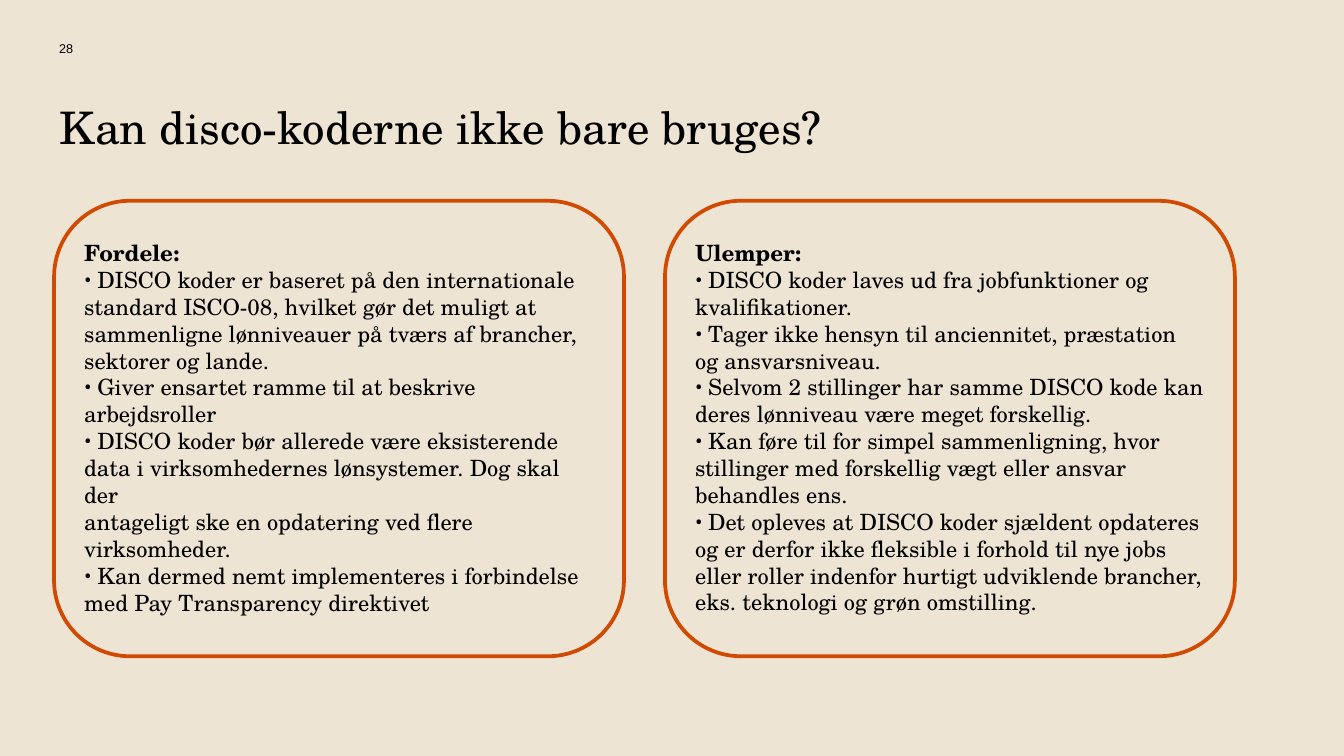
import pptx
import pptx.dml.color
import pptx.enum.shapes
import pptx.util

Pt = pptx.util.Pt
COLORS = {"back": "EEE4D4", "edge": "D04A02", "ink": "000000"}
SERIF = "TeX Gyre Schola"
MARK = "• "

PROS = [
    "• DISCO koder er baseret på den internationale",
    "standard ISCO-08, hvilket gør det muligt at",
    "sammenligne lønniveauer på tværs af brancher,",
    "sektorer og lande.",
    "• Giver ensartet ramme til at beskrive arbejdsroller",
    "• DISCO koder bør allerede være eksisterende data i "
    "virksomhedernes lønsystemer. Dog skal der",
    "antageligt ske en opdatering ved flere virksomheder.",
    "• Kan dermed nemt implementeres i forbindelse",
    "med Pay Transparency direktivet",
]
CONS = [
    "• DISCO koder laves ud fra jobfunktioner og",
    "kvalifikationer.",
    "• Tager ikke hensyn til anciennitet, præstation",
    "og ansvarsniveau.",
    "• Selvom 2 stillinger har samme DISCO kode kan",
    "deres lønniveau være meget forskellig.",
    "• Kan føre til for simpel sammenligning, hvor stillinger med "
    "forskellig vægt eller ansvar behandles ens.",
    "• Det opleves at DISCO koder sjældent opdateres og er derfor ikke "
    "fleksible i forhold til nye jobs eller roller indenfor hurtigt "
    "udviklende brancher, eks. teknologi og grøn omstilling.",
]


def color(name):
    return pptx.dml.color.RGBColor.from_string(COLORS[name])


def add_run(para, text, size, font=SERIF, bold=False):
    run = para.add_run()
    run.text = text
    run.font.size = Pt(size)
    run.font.name = font
    run.font.bold = bold
    run.font.color.rgb = color("ink")


def add_text(slide, lines, left, top, width, height, size=12, font=SERIF,
             inset=(7.2, 3.6), head=False):
    """Add one paragraph per line; with head, the first one is bold."""
    box = slide.shapes.add_textbox(Pt(left), Pt(top), Pt(width), Pt(height))
    frame = box.text_frame
    frame.word_wrap = True
    frame.margin_left = frame.margin_right = Pt(inset[0])
    frame.margin_top = frame.margin_bottom = Pt(inset[1])
    for i, line in enumerate(lines):
        para = frame.add_paragraph() if i else frame.paragraphs[0]
        if line.startswith(MARK):
            add_run(para, MARK, size, "Roboto")
            line = line.removeprefix(MARK)
        add_run(para, line, size, font, head and i == 0)


def add_panel(slide, title, lines, left, height):
    frame = slide.shapes.add_shape(
        pptx.enum.shapes.MSO_SHAPE.ROUNDED_RECTANGLE,
        Pt(left), Pt(107.6), Pt(305.3), Pt(244))
    frame.shadow.inherit = False
    frame.fill.background()
    frame.line.color.rgb = color("edge")
    frame.line.width = Pt(2)
    add_text(slide, [title, *lines], left + 9, 124.6, 287.3, height, head=True)


def main():
    deck = pptx.Presentation()
    deck.slide_width, deck.slide_height = Pt(720), Pt(405)
    slide = deck.slides.add_slide(deck.slide_layouts[6])
    slide.background.fill.solid()
    slide.background.fill.fore_color.rgb = color("back")

    add_text(slide, ["Kan disco-koderne ikke bare bruges?"],
             31.7, 53.3, 656, 73.4, size=24, inset=(0, 0))
    add_text(slide, ["28"], 31.7, 21.6, 21.6, 10.8,
             size=6.8, font="Arial", inset=(0, 0))
    add_panel(slide, "Ulemper:", CONS, 356.3, 211)
    add_panel(slide, "Fordele:", PROS, 29, 181.4)
    deck.save("out.pptx")


if __name__ == "__main__":
    main()
